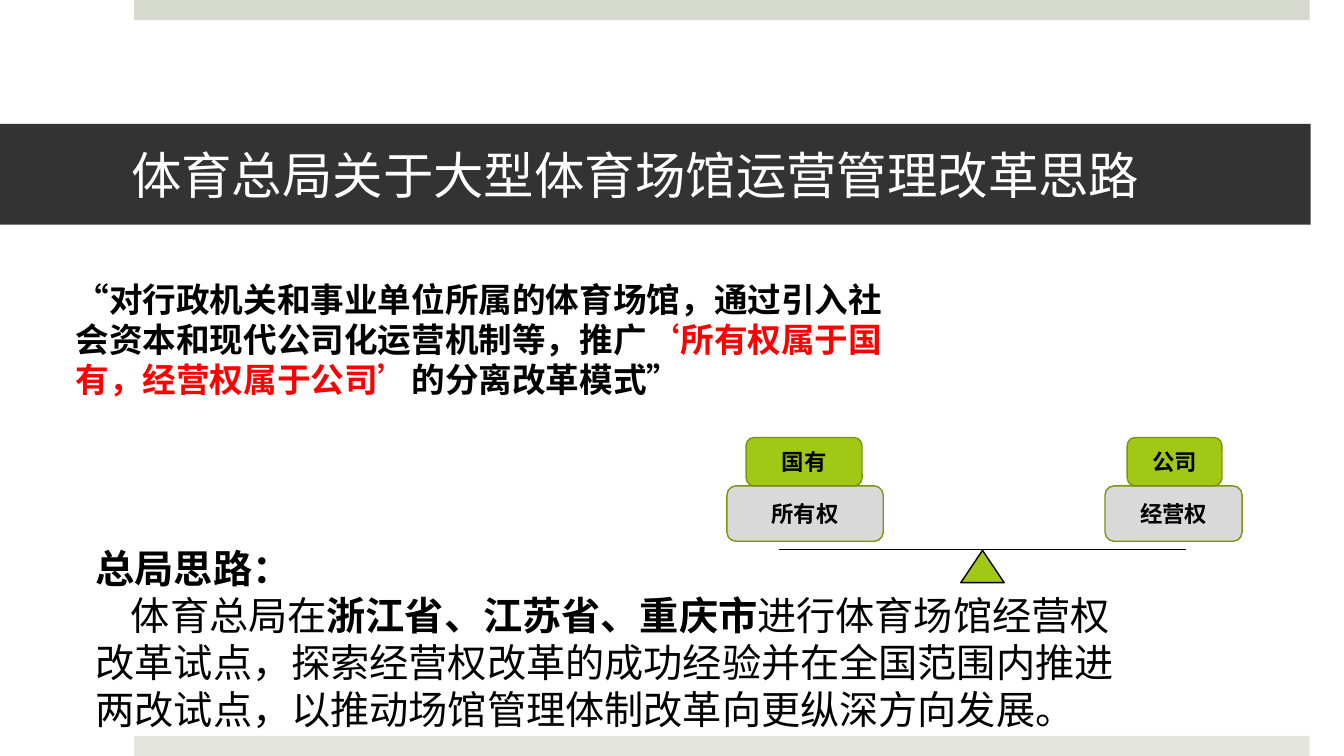
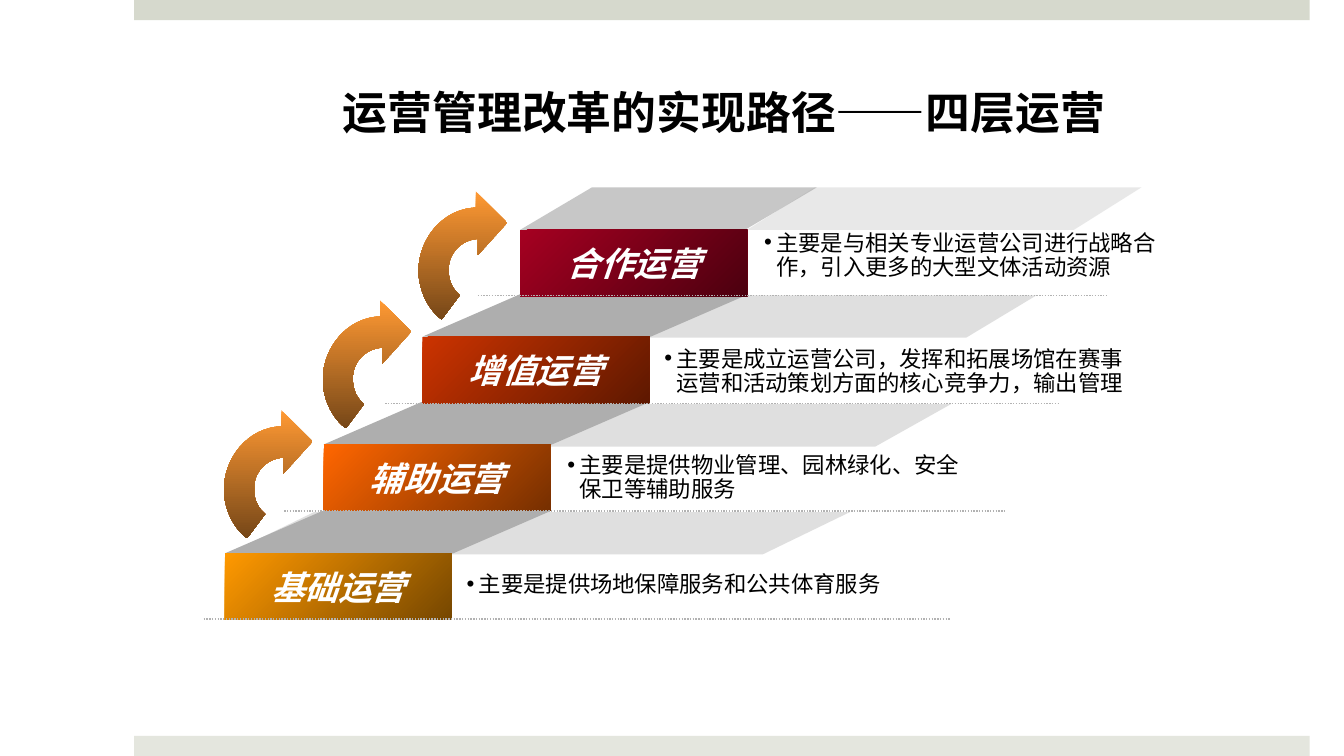
from lxml.etree import SubElement as Sub
from pptx import Presentation
from pptx.dml.color import RGBColor as Rgb
from pptx.enum.dml import MSO_LINE as Dash
from pptx.enum.lang import MSO_LANGUAGE_ID as Lang
from pptx.enum.shapes import MSO_CONNECTOR as Link, MSO_SHAPE as Form
from pptx.enum.text import MSO_ANCHOR as Anchor, MSO_AUTO_SIZE as Fit, PP_ALIGN as Align
from pptx.oxml.ns import qn
from pptx.util import Inches, Pt

BLACK = Rgb(0x00, 0x00, 0x00)
WHITE = Rgb(0xFF, 0xFF, 0xFF)
DARK = Rgb(0x33, 0x33, 0x33)
RED = Rgb(0xFF, 0x00, 0x00)
LIME = Rgb(0xA2, 0xC8, 0x16)
MOSS = Rgb(0x78, 0x94, 0x10)
SILVER = Rgb(0xD9, 0xD9, 0xD9)
TOP = Rgb(0xD6, 0xD9, 0xCD)
FOOT = Rgb(0xE4, 0xE6, 0xDE)
LIGHT = Rgb(0xDF, 0xDF, 0xDF)
SHADE = Rgb(0xAE, 0xAE, 0xAE)
DOTS = Rgb(0xB2, 0xB2, 0xB2)
ORANGE = Rgb(0xFF, 0x99, 0x33)
BROWN = Rgb(0x76, 0x47, 0x18)
HAN, SANS, ROUND = "Noto Sans CJK SC", "Arial", "Quicksand"
START = (0.59, 0.47)
TURNS = (
    ((0.42, 0.48), (0.29, 0.62), (0.3, 0.79)),
    ((0.3, 0.89), (0.34, 0.97), (0.41, 1.03)),
    ((0.23, 1.27),),
    ((0.09, 1.16), (0.01, 0.99), (0, 0.8)),
    ((0, 0.46), (0.25, 0.17), (0.57, 0.16)),
    ((0.57, 0),),
    ((0.88, 0.31),),
    ((0.59, 0.63),),
)


class Deck:
    """Hold the shared style and the current slide, and draw each kind of element."""

    def __init__(self):
        self.file = Presentation()
        self.file.slide_width, self.file.slide_height = Inches(13.33), Inches(7.5)
        self.slide = None

    def bands(self):
        """Move the top and foot bands to the master."""
        tree = self.file.slide_master.shapes.element
        for num, (top, tone) in enumerate(((0, TOP), (7.3, FOOT))):
            band = self.shape(Form.RECTANGLE, (1.33, top, 11.66, 0.2), tone)
            band.element.nvSpPr.cNvPr.set("id", str(50 + num))
            tree.insert(2 + num, band.element)

    def page(self, title, box, look, fill=None):
        """Add a slide with its title."""
        first = self.slide is None
        self.slide = self.file.slides.add_slide(self.file.slide_layouts[5])
        if first:
            self.bands()
        head = self.slide.shapes.title
        head.left, head.top, head.width, head.height = map(Inches, box)
        if fill is not None:
            head.fill.solid()
            head.fill.fore_color.rgb = fill
        frame = head.text_frame
        frame.auto_size, frame.vertical_anchor = Fit.NONE, Anchor.MIDDLE
        frame.margin_left, frame.margin_right = Inches(1.3), Inches(0.3)
        frame.paragraphs[0].alignment = Align.LEFT
        self.run(frame.paragraphs[0], title, {"name": ROUND, **look})

    def run(self, para, text, look):
        """Add a run with the given format values."""
        run = para.add_run()
        run.text = text
        values = {"bold": False, "color": BLACK, "language_id": Lang.SIMPLIFIED_CHINESE, **look}
        run.font.color.rgb = values.pop("color")
        for key, val in values.items():
            setattr(run.font, key, val)
        Sub(run.font._element, qn("a:ea"), typeface=HAN)

    def shape(self, form, box, fill=None, edge=None, adj=None, alpha=None):
        """Add a preset shape."""
        item = self.slide.shapes.add_shape(form, *map(Inches, box))
        if adj is not None:
            item.adjustments[0] = adj
        self.paint(item, fill, edge)
        if alpha is not None:
            tone = item.element.spPr.find(qn("a:solidFill"))[0]
            Sub(tone, qn("a:alpha"), val=str(alpha * 1000))
        return item

    def paint(self, item, fill, edge=None):
        """Set the fill and line, without a shadow."""
        item.shadow.inherit = False
        if fill is not None:
            item.fill.solid()
            item.fill.fore_color.rgb = fill
        if edge is None:
            item.line.fill.background()
        else:
            item.line.color.rgb, item.line.width = edge, Pt(1)

    def blend(self, item, tones, angle):
        """Fill a shape with a two-tone gradient."""
        item.fill.gradient()
        item.fill.gradient_angle = angle
        for stop, tone in zip(item.fill.gradient_stops, tones):
            stop.color.rgb = tone

    def label(self, item, text, look, wrap=True):
        """Write centred text in a shape."""
        frame = item.text_frame
        frame.word_wrap, frame.vertical_anchor = wrap, Anchor.MIDDLE
        frame.paragraphs[0].alignment = Align.CENTER
        self.run(frame.paragraphs[0], text, look)

    def text(self, box, paras, look, pitch, bullet=False, indent=0):
        """Add a text box whose paragraphs are lists of runs."""
        frame = self.slide.shapes.add_textbox(*map(Inches, box)).text_frame
        frame.word_wrap = True
        for num, runs in enumerate(paras):
            para = frame.add_paragraph() if num else frame.paragraphs[0]
            props = para._p.get_or_add_pPr()
            if bullet:
                props.set("marL", str(Inches(0.12)))
                props.set("indent", str(-Inches(0.12)))
                Sub(props, qn("a:buFont"), typeface=SANS)
                Sub(props, qn("a:buChar"), char="•")
            elif num:
                props.set("indent", str(Inches(indent)))
            para.line_spacing = Pt(pitch)
            for words, more in runs:
                self.run(para, words, {**look, **more})

    def line(self, start, end, tone, width, dash=None):
        """Add a straight line."""
        item = self.slide.shapes.add_connector(Link.STRAIGHT, *map(Inches, start + end))
        item.line.color.rgb, item.line.width = tone, Pt(width)
        if dash is not None:
            item.line.dash_style = dash
        Sub(item.element.spPr, qn("a:effectLst"))

    def arrow(self, left, top):
        """Add a curved arrow that rises to the right."""
        spots = [(Inches(left + x), Inches(top + y)) for x, y in (START, *(t[-1] for t in TURNS))]
        path = self.slide.shapes.build_freeform(*spots[0])
        path.add_line_segments(spots[1:], close=True)
        item = path.convert_to_shape()
        parts = list(item.element.iter(qn("a:lnTo")))
        for part, turn in zip(parts, TURNS):
            if len(turn) == 3:
                part.tag = qn("a:cubicBezTo")
                part.remove(part[0])
                for x, y in turn:
                    Sub(part, qn("a:pt"), x=str(Inches(x)), y=str(Inches(y)))
        self.paint(item, None)
        self.blend(item, (ORANGE, BROWN), 270)


def reform(deck):
    """Draw the reform idea and its balance."""
    deck.page("体育总局关于大型体育场馆运营管理改革思路", (0, 1.23, 13, 1),
              {"size": Pt(36), "color": WHITE}, DARK)
    quote = [
        ("“", {"name": HAN}),
        ("对行政机关和事业单位所属的体育场馆，通过引入社会资本和现代公司化运营机制等，推广", {}),
        ("‘所有权属于国有，经营权属于公司’", {"color": RED}),
        ("的分离改革模式”", {}),
    ]
    deck.text((0.65, 2.72, 8.52, 1.55), [quote],
              {"name": SANS, "size": Pt(24), "bold": True}, 28.6)
    deck.line((7.73, 5.45), (11.76, 5.45), BLACK, 0.5)
    deck.shape(Form.ISOSCELES_TRIANGLE, (9.53, 5.46, 0.43, 0.32), LIME, BLACK)
    look = {"name": ROUND, "size": Pt(16), "bold": True}
    for text, left, top, width, high, fill in (
        ("所有权", 7.21, 4.82, 1.55, 0.55, SILVER),
        ("国有", 7.4, 4.34, 1.15, 0.48, LIME),
        ("经营权", 10.96, 4.82, 1.36, 0.55, SILVER),
        ("公司", 11.18, 4.34, 0.94, 0.48, LIME),
    ):
        item = deck.shape(Form.ROUNDED_RECTANGLE, (left, top, width, high), fill, MOSS)
        deck.label(item, text, look)
    strong = {"bold": True}
    plan = [
        [("总局思路", strong), ("：", {"name": SANS, **strong})],
        [("体育总局在", {}), ("浙江省、江苏省、重庆市", strong),
         ("进行体育场馆经营权改革试点，探索经营权改革的成功经验并在全国范围内推进"
          "两改试点，以推动场馆管理体制改革向更纵深方向发展。", {})],
    ]
    deck.text((0.85, 5.35, 10.33, 1.99), plan, {"name": HAN, "size": Pt(28)}, 33.6, indent=0.35)


def stairs(deck):
    """Draw the four steps of operation."""
    deck.page("运营管理改革的实现路径——四层运营", (2.1, 0.48, 9.41, 1.25),
              {"size": Pt(32), "bold": True})
    for box, adj, alpha in (
        ((2.25, 5.08, 6.18, 0.42), 2.06, None),
        ((7.41, 1.86, 3.91, 0.42), 1.59, 69),
        ((6.03, 2.93, 4.25, 0.42), 1.66, None),
        ((4.74, 4.01, 4.69, 0.42), 1.78, None),
    ):
        deck.shape(Form.PARALLELOGRAM, box, LIGHT, adj=adj, alpha=alpha)
    steps = (
        ("基础运营", 2.23, 5.49, "FF9900", "764700", 3.23, 2.3, None),
        ("辅助运营", 3.21, 4.41, "FF6600", "762F00", 3.23, 2.3, None),
        ("增值运营", 4.19, 3.34, "CC3300", "5E1800", 3.23, 2.3, None),
        ("合作运营", 5.16, 2.28, "A50021", "4C000F", 2.94, 1.69, 69),
    )
    look = {"name": SANS, "size": Pt(24), "bold": True, "italic": True, "color": WHITE}
    for name, left, top, start, end, width, adj, alpha in steps:
        deck.shape(Form.PARALLELOGRAM, (left, top - 0.42, width, 0.42), SHADE, adj=adj, alpha=alpha)
        tile = deck.shape(Form.RECTANGLE, (left, top, 2.25, 0.66))
        deck.blend(tile, (Rgb.from_string(start), Rgb.from_string(end)), 315)
        deck.label(tile, name, look, wrap=False)
    for left, right, top in (
        (2.82, 9.97, 5.07), (3.82, 10.51, 4), (4.74, 10.99, 2.93), (2.02, 9.43, 6.14),
    ):
        deck.line((left, top), (right, top), DOTS, 1, Dash.ROUND_DOT)
    for box, words in (
        ((4.53, 5.64, 5.66, 0.34), "主要是提供场地保障服务和公共体育服务"),
        ((5.53, 4.46, 4.3, 0.59), "主要是提供物业管理、园林绿化、安全保卫等辅助服务"),
        ((6.49, 3.4, 4.94, 0.59),
         "主要是成立运营公司，发挥和拓展场馆在赛事运营和活动策划方面的核心竞争力，输出管理"),
        ((7.48, 2.25, 4.2, 0.59), "主要是与相关专业运营公司进行战略合作，引入更多的大型文体活动资源"),
    ):
        deck.text(box, [[(words, {})]], {"name": SANS, "size": Pt(16)}, 17.1, bullet=True)
    for left, top in ((2.22, 4.07), (3.2, 2.98), (4.15, 1.9)):
        deck.arrow(left, top)


def main():
    """Build both slides and save the file."""
    deck = Deck()
    reform(deck)
    stairs(deck)
    deck.file.save("out.pptx")


if __name__ == "__main__":
    main()
